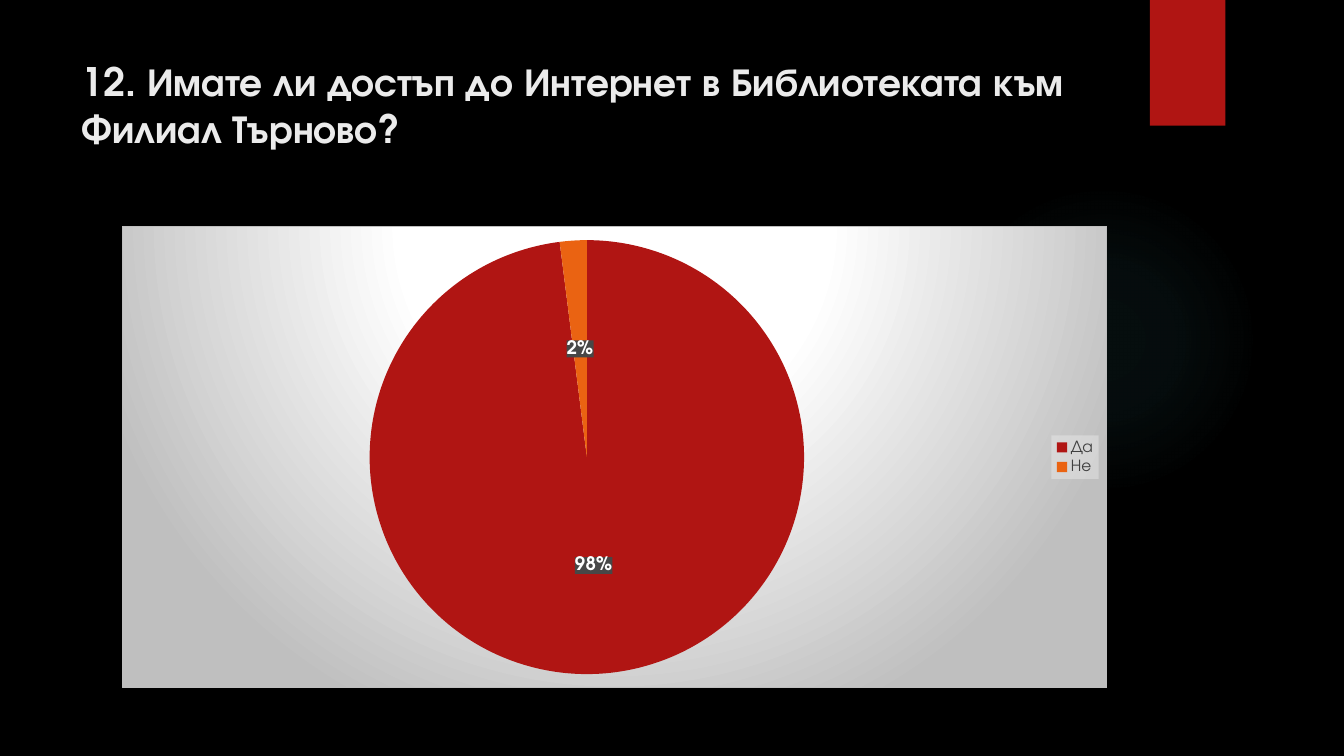
from lxml import etree
from pptx import Presentation
from pptx.chart.data import CategoryChartData
from pptx.dml.color import RGBColor
from pptx.enum.chart import XL_CHART_TYPE, XL_LABEL_POSITION, XL_LEGEND_POSITION
from pptx.enum.shapes import MSO_SHAPE
from pptx.enum.text import MSO_ANCHOR, PP_ALIGN
from pptx.oxml import parse_xml
from pptx.oxml.ns import nsdecls
from pptx.util import Cm, Pt

PIE = XL_CHART_TYPE.PIE
CENTER = XL_LABEL_POSITION.CENTER
RIGHT = XL_LEGEND_POSITION.RIGHT
OVAL, RECTANGLE = MSO_SHAPE.OVAL, MSO_SHAPE.RECTANGLE
TOP, LEFT = MSO_ANCHOR.TOP, PP_ALIGN.LEFT
TITLE_ONLY = 5


def color(value):
    """Turn a hex string into a colour."""
    return RGBColor.from_string(value)


def solid_xml(value, opacity=100):
    """Return a plain fill with an opacity in percent."""
    return (f'<a:solidFill><a:srgbClr val="{value}"><a:alpha val="{opacity * 1000}"/>'
            '</a:srgbClr></a:solidFill>')


def radial_xml(stops, top=50, bottom=50):
    """Return a circular gradient from (position, colour, opacity) stops."""
    marks = "".join(
        f'<a:gs pos="{position * 1000}"><a:srgbClr val="{value}">'
        f'<a:alpha val="{opacity * 1000}"/></a:srgbClr></a:gs>'
        for position, value, opacity in stops)
    return (f'<a:gradFill {nsdecls("a")} rotWithShape="1"><a:gsLst>{marks}</a:gsLst>'
            f'<a:path path="circle"><a:fillToRect l="50000" t="{top * 1000}" '
            f'r="50000" b="{bottom * 1000}"/></a:path></a:gradFill>')


class SlideBuilder:
    """Hold the style and the current slide."""

    font = "TeX Gyre Adventor"
    red, orange = "B01513", "EA6312"

    def __init__(self, deck, background):
        """Add a title-only slide with a plain background."""
        self.slide = deck.slides.add_slide(deck.slide_layouts[TITLE_ONLY])
        self.slide.background.fill.solid()
        self.slide.background.fill.fore_color.rgb = color(background)

    def style(self, font, size, value, bold=False):
        """Format a font."""
        font.name, font.size, font.bold = self.font, Pt(size), bold
        font.color.rgb = color(value)

    def title(self, text, left, top, width, height):
        """Place and format the title."""
        box = self.slide.shapes.title
        box.left, box.top, box.width, box.height = map(Cm, (left, top, width, height))
        frame = box.text_frame
        frame.text = text
        frame.word_wrap = True
        frame.vertical_anchor = TOP
        frame.margin_top = Cm(0.17)
        paragraph = frame.paragraphs[0]
        paragraph.alignment = LEFT
        self.style(paragraph.font, 28, "EBEBEB", True)

    def shape(self, kind, left, top, width, height):
        """Add a shape without line and shadow."""
        shape = self.slide.shapes.add_shape(kind, *map(Cm, (left, top, width, height)))
        shape.shadow.inherit = False
        shape.line.fill.background()
        return shape

    def block(self, value, *place):
        """Add a filled rectangle."""
        shape = self.shape(RECTANGLE, *place)
        shape.fill.solid()
        shape.fill.fore_color.rgb = color(value)

    def glow(self, stops, *place):
        """Add a circle with a radial gradient."""
        shape = self.shape(OVAL, *place)
        shape.fill.background()
        empty_fill = shape.element.xpath("p:spPr/a:noFill")[0]
        empty_fill.getparent().replace(empty_fill, parse_xml(radial_xml(stops)))

    def fill_chart_part(self, chart, part, fill, line="<a:ln><a:noFill/></a:ln>"):
        """Give a chart part a fill and a line, ahead of its text properties."""
        text_properties = chart.element.xpath(f"{part}c:txPr")[0]
        text_properties.addprevious(
            etree.fromstring(f'<c:spPr {nsdecls("c", "a")}>{fill}{line}</c:spPr>'))

    def pie(self, answers, slice_colors, left, top, width, height):
        """Add a pie chart with percent labels and a legend."""
        data = CategoryChartData()
        data.categories = list(answers)
        data.add_series("Series 1", answers.values())
        chart = self.slide.shapes.add_chart(
            PIE, *map(Cm, (left, top, width, height)), data).chart
        chart.has_title = False
        self.style(chart.font, 10, "FFFFFF")
        chart.has_legend = True
        chart.legend.position = RIGHT
        chart.legend.include_in_layout = False
        self.style(chart.legend.font, 12, "404040")

        plot = chart.plots[0]
        plot.vary_by_categories = True
        for index, value in enumerate(slice_colors):
            fill = plot.series[0].points[index].format.fill
            fill.solid()
            fill.fore_color.rgb = color(value)
        plot.has_data_labels = True
        labels = plot.data_labels
        labels.show_percentage, labels.show_value = True, False
        labels.number_format, labels.number_format_is_linked = "0%", False
        labels.position = CENTER
        self.style(labels.font, 13.3, "FFFFFF", True)

        backdrop = radial_xml(
            [(0, "FFFFFF", 100), (39, "FFFFFF", 100), (100, "BFBFBF", 100)], -80, 180)
        border = f'<a:ln w="9525">{solid_xml("BFBFBF")}</a:ln>'
        self.fill_chart_part(chart, "", backdrop, border)
        self.fill_chart_part(chart, ".//c:legend/", solid_xml("F2F2F2", 39))
        self.fill_chart_part(chart, ".//c:dLbls/", solid_xml("474747"))


def main():
    """Build the survey slide."""
    deck = Presentation()
    deck.slide_width, deck.slide_height = Cm(33.87), Cm(19.05)
    page = SlideBuilder(deck, "000000")
    page.glow([(0, "50B9C1", 7), (36, "50B9C1", 6), (69, "50B9C1", 0)],
              23.9, 4.65, 7.82, 7.82)
    page.block(page.red, 28.98, 0, 1.9, 3.17)
    page.title("12. Имате ли достъп до Интернет в Библиотеката към Филиал Търново?",
               1.8, 1.27, 26.14, 3.89)
    page.pie({"Да": 98, "Не": 2}, [page.red, page.orange], 3.07, 5.69, 24.84, 11.66)
    deck.save("out.pptx")


if __name__ == "__main__":
    main()
